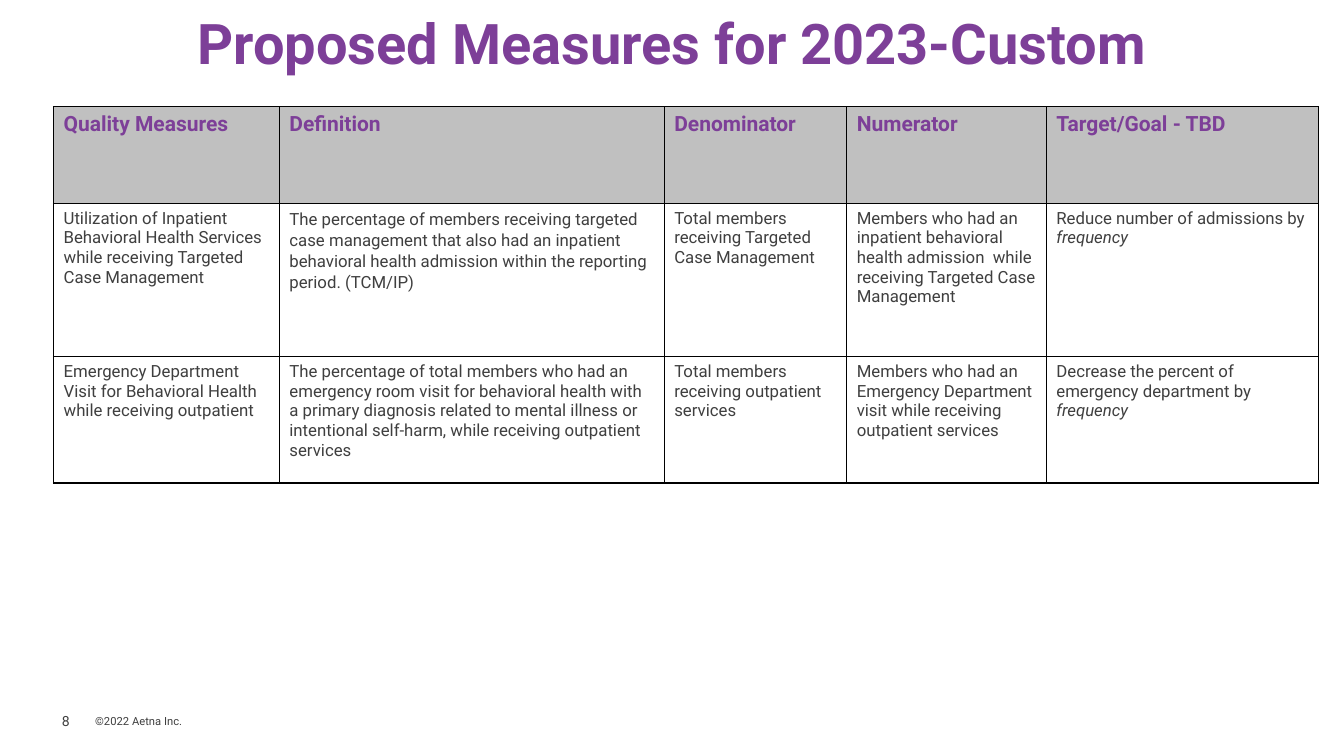
from dataclasses import dataclass

from lxml.etree import SubElement
from pptx import Presentation
from pptx.dml.color import RGBColor as RGB
from pptx.enum.text import MSO_ANCHOR as ANCHOR, MSO_AUTO_SIZE as AUTO, PP_ALIGN as ALIGN
from pptx.oxml.ns import qn
from pptx.util import Cm, Pt


@dataclass(frozen=True)
class Theme:
    font: str = "Roboto"
    purple: RGB = RGB(0x7D, 0x3F, 0x98)
    text: RGB = RGB(0x3F, 0x3F, 0x3F)
    header_fill: RGB = RGB(0xC0, 0xC0, 0xC0)
    border: str = "000000"
    border_width: int = Pt(1)
    title_size: int = Pt(40)
    header_size: int = Pt(15)
    body_size: int = Pt(12)
    number_size: int = Pt(10)
    copyright_size: int = Pt(8)


THEME = Theme()

# Table content: each cell is a plain text, or a text and its italic ending
COLUMN_WIDTHS = [5.69, 9.70, 4.60, 5.03, 6.86]
ROW_HEIGHTS = [2.44, 3.86, 3.18]
HEADERS = ["Quality Measures", "Definition", "Denominator", "Numerator", "Target/Goal - TBD"]
MEASURES = [
    [
        "Utilization of Inpatient Behavioral Health Services while receiving Targeted "
        "Case Management",
        "The percentage of members receiving targeted case management that also had an "
        "inpatient behavioral health admission within the reporting period. (TCM/IP)",
        "Total members receiving Targeted Case Management",
        "Members who had an inpatient behavioral health admission  while receiving "
        "Targeted Case Management",
        ("Reduce number of admissions by ", "frequency"),
    ],
    [
        "Emergency Department Visit for Behavioral Health while receiving outpatient",
        "The percentage of total members who had an emergency room visit for behavioral "
        "health with a primary diagnosis related to mental illness or intentional "
        "self-harm, while receiving outpatient services",
        "Total members receiving outpatient services",
        "Members who had an Emergency Department visit while receiving outpatient services",
        ("Decrease the percent of emergency department by ", "frequency"),
    ],
]
LOOSE_CELL = (1, 1)  # row and column of the cell with wider line spacing


def add_run(p, text, size, color, bold=False, italic=False):
    r = p.add_run()
    r.text = text
    r.font.name = THEME.font
    r.font.size = size
    r.font.bold = bold
    r.font.italic = italic
    r.font.color.rgb = color


def add_text(slide, box, text, size, color, anchor=ANCHOR.TOP, bold=False):
    tf = slide.shapes.add_textbox(*box).text_frame
    tf.word_wrap = True
    tf.auto_size = AUTO.NONE
    tf.vertical_anchor = anchor
    tf.margin_left = tf.margin_right = tf.margin_top = tf.margin_bottom = 0
    p = tf.paragraphs[0]
    add_run(p, text, size, color, bold)
    return p


def set_borders(cell):
    tc_pr = cell._tc.get_or_add_tcPr()
    for side in ("a:lnL", "a:lnR", "a:lnT", "a:lnB"):
        ln = SubElement(tc_pr, qn(side), w=str(THEME.border_width))
        fill = SubElement(ln, qn("a:solidFill"))
        SubElement(fill, qn("a:srgbClr"), val=THEME.border)


def add_title(slide, box):
    p = add_text(slide, box, "Proposed Measures for 2023-Custom",
                 THEME.title_size, THEME.purple, bold=True)
    p.alignment = ALIGN.CENTER
    p.line_spacing = 0.9


def add_measures_table(slide, left, top):
    rows = [HEADERS] + MEASURES
    table = slide.shapes.add_table(
        len(rows), len(HEADERS), left, top,
        Cm(sum(COLUMN_WIDTHS)), Cm(sum(ROW_HEIGHTS))).table
    table.first_row = table.horz_banding = False
    for column, width in zip(table.columns, COLUMN_WIDTHS):
        column.width = Cm(width)
    for row, height in zip(table.rows, ROW_HEIGHTS):
        row.height = Cm(height)

    for i, row in enumerate(rows):
        for j, content in enumerate(row):
            cell = table.cell(i, j)
            p = cell.text_frame.paragraphs[0]
            set_borders(cell)
            if i == 0:
                cell.fill.solid()
                cell.fill.fore_color.rgb = THEME.header_fill
                add_run(p, content, THEME.header_size, THEME.purple, bold=True)
                continue
            cell.fill.background()
            parts = (content,) if isinstance(content, str) else content
            for k, part in enumerate(parts):
                add_run(p, part, THEME.body_size, THEME.text, italic=k > 0)
            if (i, j) == LOOSE_CELL:
                p.line_spacing = 1.07


def add_footer(slide, left, top, height):
    # Page number, then the copyright line beside it
    add_text(slide, (left, top, Cm(0.84), height), "8",
             THEME.number_size, THEME.text, ANCHOR.MIDDLE)
    add_text(slide, (left + Cm(0.84), top, Cm(22.35), height), "©2022 Aetna Inc.",
             THEME.copyright_size, THEME.text, ANCHOR.MIDDLE)


def main():
    prs = Presentation()
    prs.slide_width, prs.slide_height = Cm(33.87), Cm(19.05)
    slide = prs.slides.add_slide(prs.slide_layouts[6])
    add_title(slide, (Cm(3.5), Cm(0.4), Cm(26.85), Cm(1.85)))
    add_measures_table(slide, Cm(1.35), Cm(2.69))
    add_footer(slide, Cm(1.56), Cm(17.85), Cm(0.64))
    prs.save("out.pptx")


if __name__ == "__main__":
    main()
